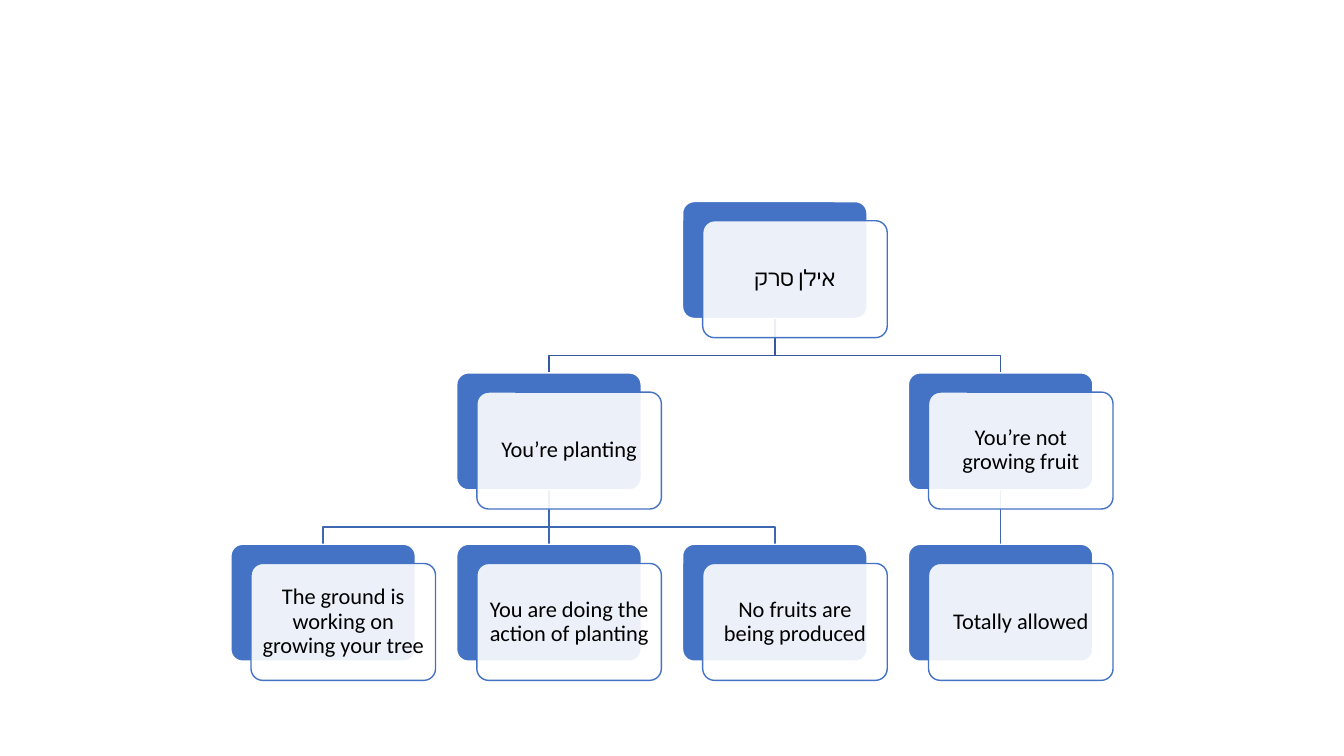
from dataclasses import dataclass
from typing import Optional

from lxml.etree import SubElement
from pptx import Presentation
from pptx.dml.color import RGBColor
from pptx.enum.shapes import MSO_CONNECTOR, MSO_SHAPE
from pptx.enum.text import MSO_ANCHOR, PP_ALIGN
from pptx.oxml.ns import qn
from pptx.util import Inches, Pt

LEFT, TOP = 2.29, 2.0
COL, ROW = 2.24, 1.7
WIDE, HIGH = 1.83, 1.16
SHIFT_X, SHIFT_Y = 0.2, 0.19
DROP = 0.37
BLUE, WHITE, BLACK = "4472C4", "FFFFFF", "000000"
LINKS = {1: "365B9D", 2: "3E67B2"}


@dataclass
class Node:
    text: str
    col: int
    row: int
    parent: Optional["Node"] = None

    @property
    def left(self) -> float:
        return LEFT + self.col * COL

    @property
    def top(self) -> float:
        return TOP + self.row * ROW

    @property
    def mid(self) -> float:
        return self.left + WIDE / 2


root = Node("אילן סרק", 2, 0)
plant = Node("You’re planting", 1, 1, root)
barren = Node("You’re not growing fruit", 3, 1, root)
NODES = [
    root,
    plant,
    Node("The ground is working on growing your tree", 0, 2, plant),
    Node("You are doing the action of planting", 1, 2, plant),
    Node("No fruits are being produced", 2, 2, plant),
    barren,
    Node("Totally allowed", 3, 2, barren),
]


def color(code: str) -> RGBColor:
    return RGBColor.from_string(code)


def stroke(shape, code: str) -> None:
    shape.line.color.rgb = color(code)
    shape.line.width = Pt(1)


def link(shapes, node: Node) -> None:
    """Join a node to its parent, straight down or with two bends."""
    start, end = node.parent.mid, node.mid
    base = node.parent.top + HIGH
    if node.col == node.parent.col:
        line = shapes.add_connector(MSO_CONNECTOR.STRAIGHT, Inches(start),
                                    Inches(base), Inches(end), Inches(node.top))
        SubElement(line._element.spPr, qn("a:effectLst"))
    else:
        bend = base + DROP
        pen = shapes.build_freeform(Inches(start), Inches(base))
        spots = [(start, bend), (end, bend), (end, node.top)]
        pen.add_line_segments([(Inches(x), Inches(y)) for x, y in spots], close=False)
        line = pen.convert_to_shape()
        line.fill.background()
        line.shadow.inherit = False
    stroke(line, LINKS[node.row])


def card(shapes, left: float, top: float, fill: str, edge: str):
    box = shapes.add_shape(MSO_SHAPE.ROUNDED_RECTANGLE, Inches(left),
                           Inches(top), Inches(WIDE), Inches(HIGH))
    box.adjustments[0] = 0.1
    box.shadow.inherit = False
    box.fill.solid()
    box.fill.fore_color.rgb = color(fill)
    stroke(box, edge)
    return box


def label(box, text: str) -> None:
    frame = box.text_frame
    frame.word_wrap = True
    frame.vertical_anchor = MSO_ANCHOR.MIDDLE
    frame.margin_left = frame.margin_right = Inches(0.07)
    frame.margin_top = frame.margin_bottom = Inches(0.07)
    para = frame.paragraphs[0]
    para.alignment = PP_ALIGN.CENTER
    para.line_spacing = 0.9
    para._p.get_or_add_pPr().set("rtl", "1")
    run = para.add_run()
    run.text = text
    run.font.size = Pt(16)
    run.font.name = "Calibri"
    run.font.color.rgb = color(BLACK)
    SubElement(run._r.get_or_add_rPr(), qn("a:cs")).set("typeface", "Calibri")


def draw(shapes, node: Node) -> None:
    """Place the blue card and the clear card with the text over it."""
    card(shapes, node.left, node.top, BLUE, WHITE)
    front = card(shapes, node.left + SHIFT_X, node.top + SHIFT_Y, WHITE, BLUE)
    tint = front._element.spPr.find(qn("a:solidFill")).find(qn("a:srgbClr"))
    SubElement(tint, qn("a:alpha")).set("val", "90000")
    label(front, node.text)


def main() -> None:
    deck = Presentation()
    deck.slide_width, deck.slide_height = Inches(13.33), Inches(7.5)
    shapes = deck.slides.add_slide(deck.slide_layouts[6]).shapes
    for node in NODES:
        if node.parent:
            link(shapes, node)
    for node in NODES:
        draw(shapes, node)
    deck.save("out.pptx")


if __name__ == "__main__":
    main()
